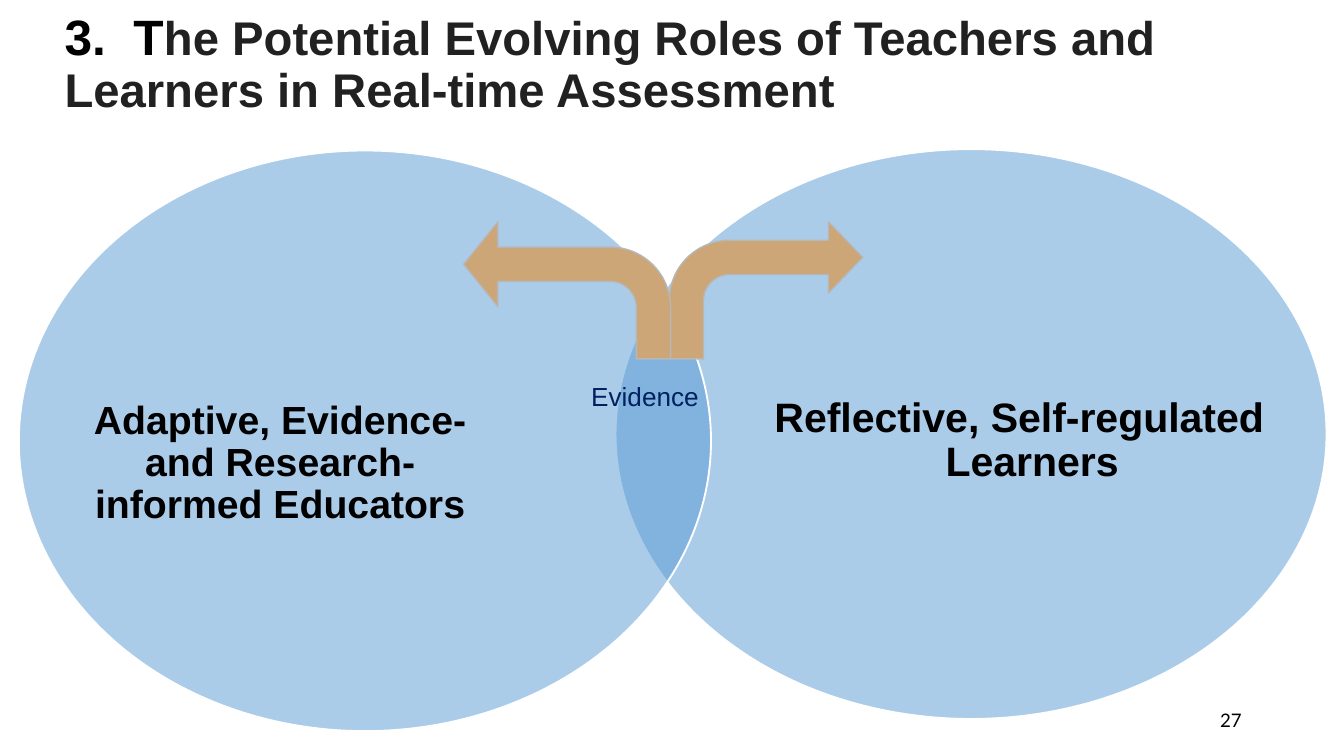
import pptx
import pptx.dml.color
import pptx.enum.shapes
import pptx.enum.text
import pptx.oxml
import pptx.oxml.ns
import pptx.util
from lxml import etree

RGB = pptx.dml.color.RGBColor
Inches = pptx.util.Inches
Pt = pptx.util.Pt
Kind = pptx.enum.shapes.MSO_SHAPE
Align = pptx.enum.text.PP_ALIGN
Anchor = pptx.enum.text.MSO_ANCHOR

BLUE = RGB(0x59, 0x9B, 0xD5)
TAN = RGB(0xCC, 0xA6, 0x77)
GREY = RGB(0xB7, 0xB7, 0xB7)
WHITE = RGB(0xFF, 0xFF, 0xFF)
BLACK = RGB(0, 0, 0)
DARK = RGB(0x21, 0x21, 0x21)
NAVY = RGB(0x00, 0x20, 0x60)


class Deck:
    """Hold the style and the current slide, with a method for each kind of element."""

    def __init__(self):
        self.show = pptx.Presentation()
        self.show.slide_width = Inches(10)
        self.show.slide_height = self.show.slide_width * 9 // 16
        self.slide = self.show.slides.add_slide(self.show.slide_layouts[5])
        self.group = self.slide.shapes.add_group_shape()

    def font(self, font, size, color, bold=False, name="Arial"):
        font.name, font.size, font.bold = name, Pt(size), bold
        font.color.rgb = color

    def frame(self, frame, pad, anchor=Anchor.MIDDLE):
        frame.word_wrap = True
        frame.auto_size = pptx.enum.text.MSO_AUTO_SIZE.NONE
        frame.vertical_anchor = anchor
        frame.margin_left = frame.margin_right = Inches(pad[0])
        frame.margin_top = frame.margin_bottom = Inches(pad[1])

    def title(self, box, runs):
        title = self.slide.shapes.title
        title.left, title.top, title.width, title.height = map(Inches, box)
        self.frame(title.text_frame, (0.07, 0.04))
        para = title.text_frame.paragraphs[0]
        para.alignment, para.line_spacing = Align.LEFT, 0.9
        for text, size, color in runs:
            run = para.add_run()
            run.text = text
            self.font(run.font, size, color, True)

    def text(self, home, box, lines, size, color, bold=False, name="Arial",
             align=Align.CENTER, pad=(0, 0), anchor=Anchor.MIDDLE, gap=0.9, dents=(0,)):
        frame = home.shapes.add_textbox(*map(Inches, box)).text_frame
        self.frame(frame, pad, anchor)
        frame.text = "\n".join(lines)
        for para, dent in zip(frame.paragraphs, dents):
            para.alignment, para.line_spacing = align, gap
            para._p.get_or_add_pPr().set("marL", str(Inches(dent)))
            self.font(para.font, size, color, bold, name)

    def shape(self, home, kind, box, fill, line, width):
        shape = home.shapes.add_shape(kind, *map(Inches, box))
        shape.shadow.inherit = False
        shape.fill.solid()
        shape.fill.fore_color.rgb = fill
        shape.line.color.rgb = line
        shape.line.width = Pt(width)
        return shape

    def circle(self, box):
        shape = self.shape(self.group, Kind.OVAL, box, BLUE, WHITE, 1)
        qn = pptx.oxml.ns.qn
        tint = shape._element.spPr.find(qn("a:solidFill")).find(qn("a:srgbClr"))
        etree.SubElement(tint, qn("a:alpha")).set("val", "50000")

    def arrow(self, box, head, flip=False):
        shape = self.shape(self.slide, Kind.BENT_ARROW, box, TAN, GREY, 0.75)
        for spot, value in enumerate((0.25, head, 0.25, 0.44)):
            shape.adjustments[spot] = value
        if flip:
            shape._element.spPr.xfrm.set("flipH", "1")


def main():
    deck = Deck()
    deck.title((0.41, 0.05, 8.91, 0.87), [
        ("3.  T", 26.6, BLACK),
        ("he Potential Evolving Roles of Teachers and Learners in Real-time Assessment", 25.3, DARK),
    ])
    deck.circle((4.58, 1.11, 5.29, 4.24))
    deck.text(deck.group, (5.27, 2.03, 4.6, 2.51), ["Reflective, Self-regulated", "Learners"],
              22, BLACK, True, dents=(0.03, 0.22))
    deck.circle((0.14, 1.12, 5.15, 4.32))
    deck.text(deck.group, (0.47, 1.94, 3.23, 3.02),
              ["Adaptive, Evidence- and Research- informed Educators"], 21, BLACK, True)
    deck.text(deck.slide, (7.06, 5.21, 2.25, 0.3), ["27"], 10, BLACK, name="Lato",
              align=Align.RIGHT, pad=(0.07, 0.04), gap=1.0)
    deck.text(deck.slide, (3.98, 2.78, 1.64, 0.5), ["Evidence"], 14, NAVY,
              pad=(0.1, 0.05), anchor=Anchor.TOP, gap=1.0)
    deck.arrow((4.98, 1.65, 1.44, 1.02), 0.26)
    deck.arrow((3.45, 1.65, 1.54, 1.02), 0.31, flip=True)
    deck.show.save("out.pptx")


if __name__ == "__main__":
    main()
